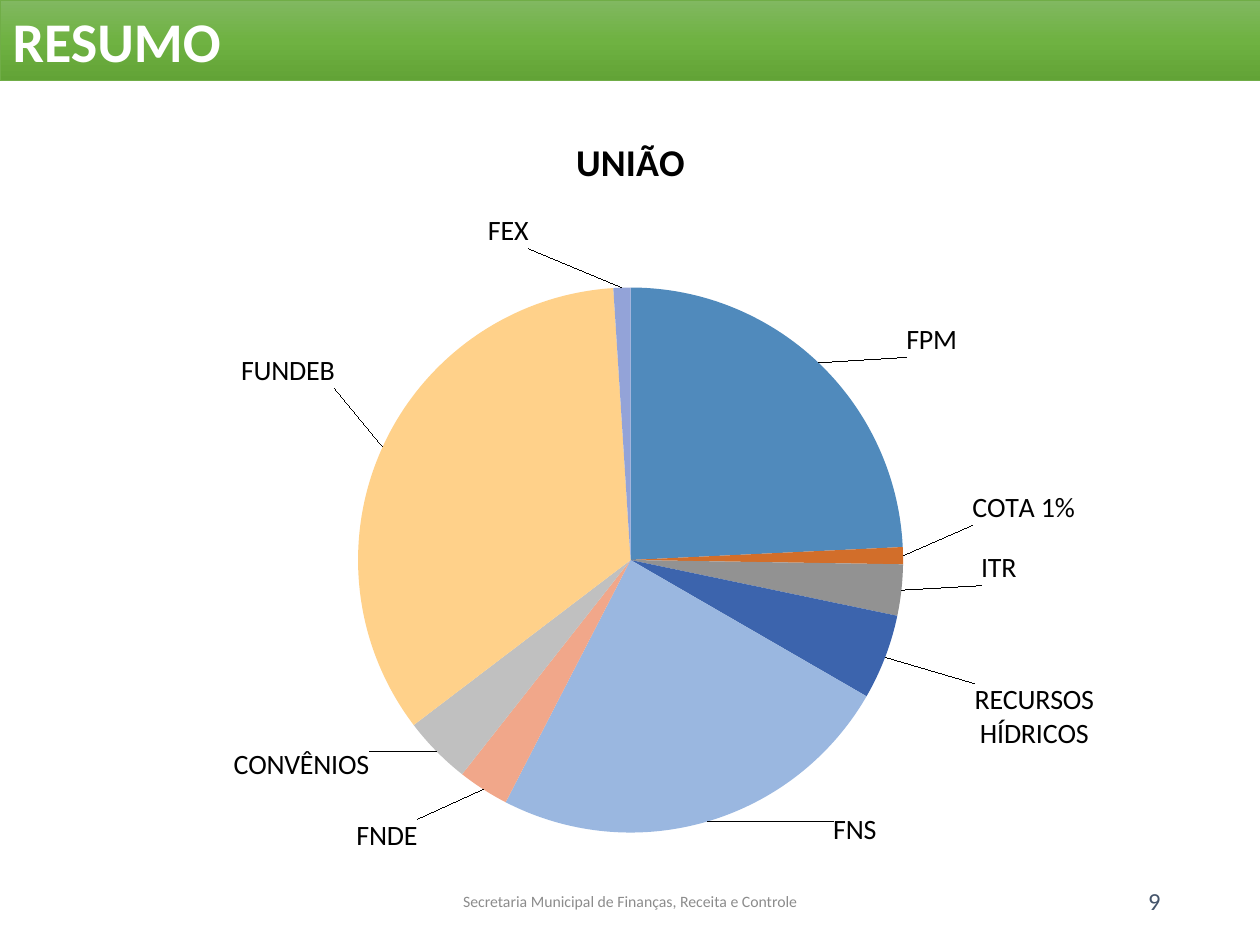
import copy

import pptx
import pptx.chart.data
import pptx.dml.color
import pptx.enum.chart
import pptx.enum.text
import pptx.oxml
import pptx.oxml.ns
import pptx.util

Inches = pptx.util.Inches
Pt = pptx.util.Pt
LEFT = pptx.enum.text.PP_ALIGN.LEFT
CENTER = pptx.enum.text.PP_ALIGN.CENTER
RIGHT = pptx.enum.text.PP_ALIGN.RIGHT
MIDDLE = pptx.enum.text.MSO_ANCHOR.MIDDLE

THEME = {
    "font": "Calibri",
    "bar": ["81B861", "6FB242", "62A336"],
    "bar_line": "70AD47",
    "white": "FFFFFF",
    "black": "000000",
    "footer": "8C8C8C",
    "number": "44546A",
    "slices": ["508ABC", "D26E2A", "929292", "E2AA00", "3C64AD", "629A3E",
               "9AB7E0", "F1A78A", "C0C0C0", "FFD18A", "93A3D8"],
    "heading_size": 32,
    "chart_title_size": 21.6,
    "label_size": 16,
    "footer_size": 9,
    "number_size": 14,
}


def style(font, size, color, bold=False):
    font.name = THEME["font"]
    font.size = Pt(size)
    font.bold = bold
    font.color.rgb = pptx.dml.color.RGBColor.from_string(color)


def layout_xml(**settings):
    entries = "".join(f'<c:{key} val="{value}"/>' for key, value in settings.items())
    return (f'<c:layout {pptx.oxml.ns.nsdecls("c")}><c:manualLayout>'
            f'{entries}</c:manualLayout></c:layout>')


deck = pptx.Presentation()
deck.slide_width = Inches(10)
deck.slide_height = Inches(7.5)
slide = deck.slides.add_slide(deck.slide_layouts[5])

heading = slide.shapes.title
heading.left, heading.top = Inches(0), Inches(0)
heading.width, heading.height = Inches(10), Inches(0.64)
heading.fill.gradient()
heading.fill.gradient_angle = 270
first_stop = heading.fill.gradient_stops[0]._gs
first_stop.addnext(copy.deepcopy(first_stop))
for stop, color, position in zip(heading.fill.gradient_stops, THEME["bar"], [0, 0.5, 1]):
    stop.color.rgb = pptx.dml.color.RGBColor.from_string(color)
    stop.position = position
heading.line.color.rgb = pptx.dml.color.RGBColor.from_string(THEME["bar_line"])
heading.line.width = Pt(0.5)
heading.text_frame.text = "RESUMO"
heading.text_frame.vertical_anchor = MIDDLE
heading.text_frame.paragraphs[0].alignment = LEFT
style(heading.text_frame.paragraphs[0].runs[0].font, THEME["heading_size"], THEME["white"], True)

for text, left, width, alignment, part in [
    ("9", 7.06, 2.25, RIGHT, "number"),
    ("Secretaria Municipal de Finanças, Receita e Controle", 3.31, 3.38, CENTER, "footer"),
]:
    note = slide.shapes.add_textbox(Inches(left), Inches(6.95), Inches(width), Inches(0.4))
    note.text_frame.word_wrap = True
    note.text_frame.vertical_anchor = MIDDLE
    note.text_frame.text = text
    note.text_frame.paragraphs[0].alignment = alignment
    style(note.text_frame.paragraphs[0].runs[0].font, THEME[f"{part}_size"], THEME[part])

transfers = [
    ("FPM", 24, 0.08, 0),
    ("COTA 1%", 1, 0.06, -0.06),
    ("ITR", 3, 0.07, -0.05),
    ("LEI KANDIR", 0, 0.08, 0),
    ("RECURSOS HÍDRICOS", 5, 0.08, 0.03),
    ("FNAS", 0, 0.12, 0.12),
    ("FNS", 24, 0.12, -0.02),
    ("FNDE", 3, -0.06, 0.03),
    ("CONVÊNIOS", 4, -0.06, -0.01),
    ("FUNDEB", 34, -0.04, -0.07),
    ("FEX", 1, -0.11, -0.04),
]
union_data = pptx.chart.data.CategoryChartData()
union_data.categories = [transfer[0] for transfer in transfers]
union_data.add_series("UNIÃO", [transfer[1] for transfer in transfers])
union_chart = slide.shapes.add_chart(
    pptx.enum.chart.XL_CHART_TYPE.PIE,
    Inches(0.91), Inches(0.84), Inches(8.19), Inches(6.27), union_data).chart
style(union_chart.font, THEME["label_size"], THEME["black"])
union_chart.has_legend = False
union_chart.has_title = True
union_chart.chart_title.include_in_layout = False
union_title = union_chart.chart_title.text_frame
union_title.text = "UNIÃO"
style(union_title.paragraphs[0].runs[0].font, THEME["chart_title_size"], THEME["black"], True)

plot_area = union_chart._chartSpace.chart.plotArea
for old_layout in plot_area.findall(pptx.oxml.ns.qn("c:layout")):
    plot_area.remove(old_layout)
plot_area.insert(0, pptx.oxml.parse_xml(layout_xml(
    layoutTarget="inner", xMode="edge", yMode="edge", x=0.12, y=0.23, w=0.76, h=0.69)))

union_chart.plots[0].vary_by_categories = True
slices = union_chart.plots[0].series[0]
labels = slices.data_labels
labels.show_category_name = True
labels.show_value = False
labels.position = pptx.enum.chart.XL_LABEL_POSITION.OUTSIDE_END
style(labels.font, THEME["label_size"], THEME["black"])
for index, (name, share, shift_x, shift_y) in enumerate(transfers):
    slice_fill = slices.points[index].format.fill
    slice_fill.solid()
    slice_fill.fore_color.rgb = pptx.dml.color.RGBColor.from_string(THEME["slices"][index])
    labels._element.insert(index, pptx.oxml.parse_xml(
        f'<c:dLbl {pptx.oxml.ns.nsdecls("c")}><c:idx val="{index}"/>'
        f'{layout_xml(x=shift_x, y=shift_y)}<c:dLblPos val="outEnd"/>'
        '<c:showLegendKey val="0"/><c:showVal val="0"/><c:showCatName val="1"/>'
        '<c:showSerName val="0"/><c:showPercent val="0"/><c:showBubbleSize val="0"/></c:dLbl>'))

deck.save("out.pptx")
